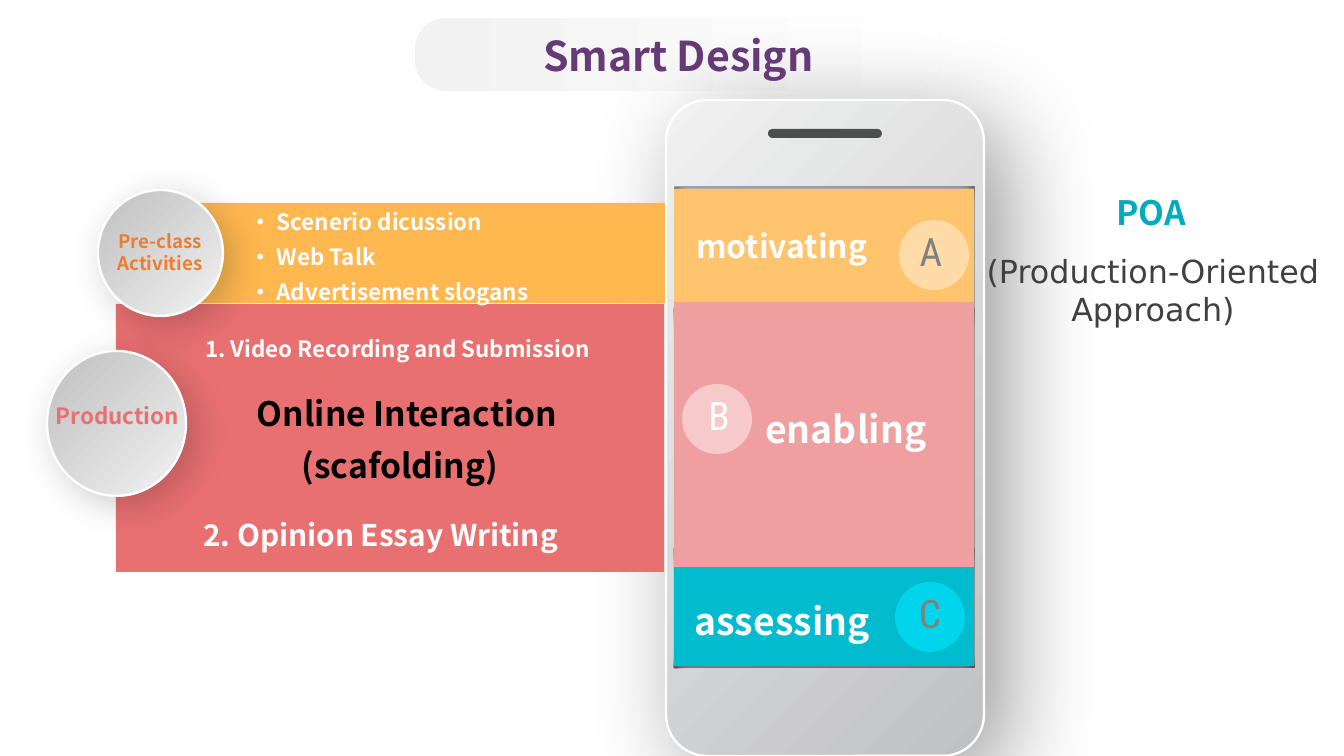
from lxml.etree import SubElement
from pptx import Presentation
from pptx.dml.color import RGBColor
from pptx.enum.shapes import MSO_SHAPE
from pptx.enum.text import MSO_ANCHOR, PP_ALIGN
from pptx.oxml.ns import qn
from pptx.util import Pt

PX = 914400 / 134.4
NOTO, DEJAVU, ROBOTO = "Noto Sans CJK SC", "DejaVu Sans", "Roboto Condensed"
LEFT, CENTER, JUSTIFY = PP_ALIGN.LEFT, PP_ALIGN.CENTER, PP_ALIGN.JUSTIFY
RECT, ROUND, OVAL = MSO_SHAPE.RECTANGLE, MSO_SHAPE.ROUNDED_RECTANGLE, MSO_SHAPE.OVAL

WHITE = RGBColor(0xFF, 0xFF, 0xFF)
BLACK = RGBColor(0x00, 0x00, 0x00)
PALE = RGBColor(0xF2, 0xF2, 0xF2)
SILVER = RGBColor(0xF1, 0xF1, 0xF1)
STEEL = RGBColor(0xC0, 0xC1, 0xC3)
LIGHT_GRAY = RGBColor(0xBF, 0xBF, 0xBF)
GRAY = RGBColor(0x80, 0x80, 0x80)
DARK_GRAY = RGBColor(0x40, 0x40, 0x40)
SPEAKER = RGBColor(0x4D, 0x4F, 0x4E)
PURPLE = RGBColor(0x66, 0x3A, 0x77)
AMBER = RGBColor(0xFF, 0xB8, 0x50)
LIGHT_AMBER = RGBColor(0xFF, 0xC4, 0x6D)
PALE_AMBER = RGBColor(0xFF, 0xDB, 0xA7)
ORANGE = RGBColor(0xED, 0x7D, 0x31)
CORAL = RGBColor(0xE8, 0x70, 0x71)
LIGHT_CORAL = RGBColor(0xEF, 0x9F, 0x9F)
PALE_CORAL = RGBColor(0xF6, 0xCA, 0xCA)
TEAL = RGBColor(0x01, 0xBB, 0xCF)
DARK_TEAL = RGBColor(0x01, 0xAC, 0xBE)
CYAN = RGBColor(0x01, 0xE5, 0xFD)

TITLE_FADE = (0, [(0, PALE, 100), (99, WHITE, 100)])
PHONE_FADE = (45, [(0, SILVER, 100), (100, STEEL, 100)])
BADGE_FADE = (45, [(0, LIGHT_GRAY, 100), (100, PALE, 100)])
EDGE_FADE = (0, [(0, PALE, 0), (62, BLACK, 10), (100, BLACK, 34)])
BOTTOM_FADE = (0, [(0, PALE, 0), (61, BLACK, 10), (100, BLACK, 48)])
CYAN_GLASS = (0, [(0, CYAN, 61), (100, CYAN, 61)])
PHONE_SHADOW = (40, 54, 16)
BADGE_SHADOW = (20, 20, 6)

SHAPES = [
    (ROUND, (415, 18, 527, 73), TITLE_FADE, {"corner": 0.42}),
    (ROUND, (666, 100, 318, 656), PHONE_FADE, {"corner": 0.13, "shadow": PHONE_SHADOW}),
    (ROUND, (768, 129, 114, 9), SPEAKER, {"corner": 0.5}),
    (RECT, (675, 188, 17, 481), EDGE_FADE, {"rotation": 180}),
    (RECT, (957, 187, 17, 481), EDGE_FADE, {}),
    (RECT, (812, 50, 26, 300), EDGE_FADE, {"rotation": 270}),
    (RECT, (806, 177, 36, 300), EDGE_FADE, {"rotation": 270}),
    (RECT, (806, 417, 36, 300), EDGE_FADE, {"rotation": 270}),
    (RECT, (814, 508, 20, 300), BOTTOM_FADE, {"rotation": 90}),
    (RECT, (674, 189, 300, 113), LIGHT_AMBER, {}),
    (RECT, (674, 302, 300, 270), LIGHT_CORAL, {}),
    (RECT, (674, 567, 300, 99), TEAL, {}),
    (RECT, (116, 304, 548, 268), CORAL, {}),
    (OVAL, (47, 351, 139, 145), BADGE_FADE, {"shadow": BADGE_SHADOW}),
    (RECT, (192, 203, 473, 100), AMBER, {}),
    (OVAL, (98, 190, 125, 126), BADGE_FADE, {"shadow": BADGE_SHADOW}),
    (OVAL, (899, 220, 70, 70), PALE_AMBER, {}),
    (OVAL, (682, 384, 70, 70), PALE_CORAL, {}),
    (OVAL, (895, 582, 70, 70), CYAN_GLASS, {}),
]

TEXTS = [
    ((415, 19, 527, 73), ["Smart Design"], CENTER, 1, (NOTO, 22, PURPLE, True)),
    ((39, 396, 157, 47), ["Production"], CENTER, 1, (NOTO, 12, CORAL, True)),
    ((101, 223, 118, 59), ["Pre-class Activities"], CENTER, 1, (NOTO, 10, ORANGE, True)),
    ((1040, 185, 222, 54), ["POA"], CENTER, 1, (NOTO, 18, DARK_TEAL, True)),
    ((962, 245, 382, 90), ["(Production-Oriented Approach)"], CENTER, 1,
     (DEJAVU, 17, DARK_GRAY, False)),
    ((236, 194, 323, 120), ["· Scenerio dicussion", "· Web Talk", "· Advertisement slogans"],
     JUSTIFY, 1.3, (NOTO, 12, WHITE, True)),
    ((192, 320, 470, 46), ["1. Video Recording and Submission"], JUSTIFY, 1.3,
     (NOTO, 12, WHITE, True)),
    ((181, 374, 452, 60), ["Online Interaction"], CENTER, 1.3, (NOTO, 18, BLACK, True)),
    ((174, 426, 452, 60), ["(scafolding)"], CENTER, 1.3, (NOTO, 18, BLACK, True)),
    ((190, 499, 438, 56), ["2. Opinion Essay Writing"], JUSTIFY, 1.3, (NOTO, 16, WHITE, True)),
    ((905, 221, 52, 60), ["A"], CENTER, 1, (ROBOTO, 21, GRAY, False)),
    ((693, 385, 52, 60), ["B"], CENTER, 1, (ROBOTO, 21, WHITE, False)),
    ((904, 583, 52, 60), ["C"], CENTER, 1, (ROBOTO, 21, GRAY, False)),
    ((683, 220, 215, 52), ["motivating"], LEFT, 1, (NOTO, 17, WHITE, True)),
    ((752, 400, 203, 59), ["enabling"], LEFT, 1, (NOTO, 20, WHITE, True)),
    ((681, 592, 212, 59), ["assessing"], LEFT, 1, (NOTO, 20, WHITE, True)),
]


def scaled(box):
    return [round(value * PX) for value in box]


def add_color(parent, color, alpha):
    element = SubElement(parent, qn("a:srgbClr"), val=str(color))
    if alpha < 100:
        SubElement(element, qn("a:alpha"), val=str(alpha * 1000))


def set_gradient(shape, angle, stops):
    shape.fill.gradient()
    shape.fill.gradient_angle = -angle % 360
    stop_list = shape.element.spPr.find(qn("a:gradFill")).find(qn("a:gsLst"))
    for stop in list(stop_list):
        stop_list.remove(stop)
    for position, color, alpha in stops:
        add_color(SubElement(stop_list, qn("a:gs"), pos=str(position * 1000)), color, alpha)


def set_shadow(shape, alpha, blur, distance):
    effects = shape.element.spPr.find(qn("a:effectLst"))
    outer = SubElement(effects, qn("a:outerShdw"), blurRad=str(Pt(blur)),
                       dist=str(Pt(distance)), dir="2700000", algn="tl", rotWithShape="0")
    add_color(outer, BLACK, alpha)


def add_shape(slide, kind, box, fill, options):
    shape = slide.shapes.add_shape(kind, *scaled(box))
    shape.shadow.inherit = False
    shape.rotation = options.get("rotation", 0)
    if "corner" in options:
        shape.adjustments[0] = options["corner"]
    if isinstance(fill, RGBColor):
        shape.fill.solid()
        shape.fill.fore_color.rgb = fill
    else:
        set_gradient(shape, *fill)
    if "shadow" in options:
        shape.line.color.rgb = WHITE
        shape.line.width = Pt(1.25)
        set_shadow(shape, *options["shadow"])
    else:
        shape.line.fill.background()


def add_text(slide, box, lines, alignment, spacing, style):
    frame = slide.shapes.add_textbox(*scaled(box)).text_frame
    frame.word_wrap = True
    if lines == ["Smart Design"]:
        frame.vertical_anchor = MSO_ANCHOR.MIDDLE
    name, size, color, bold = style
    frame.text = "\n".join(lines)
    for paragraph in frame.paragraphs:
        paragraph.alignment = alignment
        paragraph.line_spacing = spacing
        for attribute, value in {"name": name, "size": Pt(size), "bold": bold}.items():
            setattr(paragraph.runs[0].font, attribute, value)
        paragraph.runs[0].font.color.rgb = color


def main():
    presentation = Presentation()
    presentation.slide_width, presentation.slide_height = scaled((1344, 756))
    slide = presentation.slides.add_slide(presentation.slide_layouts[6])
    for item in SHAPES:
        add_shape(slide, *item)
    for item in TEXTS:
        add_text(slide, *item)
    presentation.save("out.pptx")


if __name__ == "__main__":
    main()
